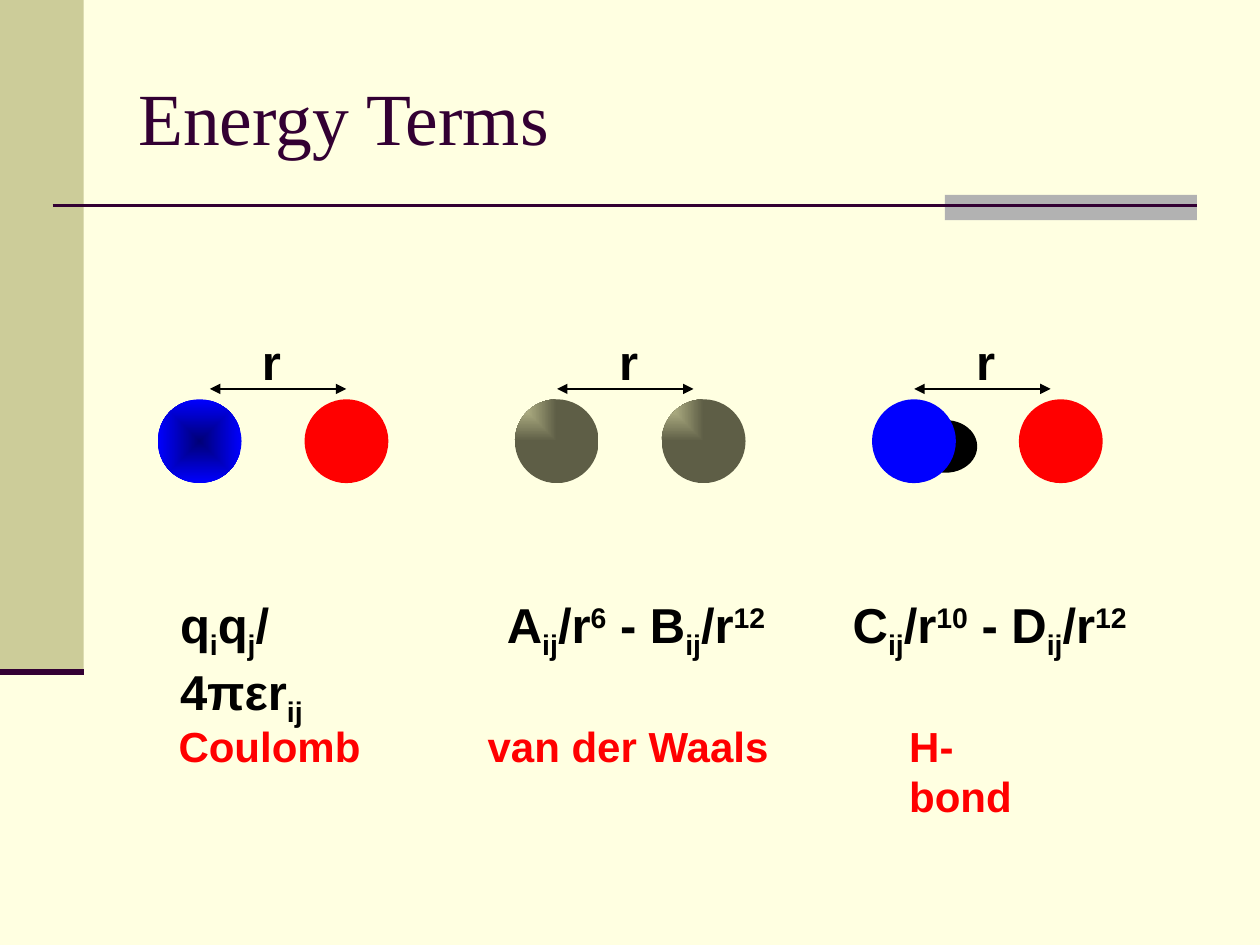
import pptx
import pptx.util
import pptx.dml.color
import pptx.enum.shapes
import pptx.enum.text
import pptx.oxml
import pptx.oxml.ns
from lxml import etree

Cm = pptx.util.Cm
Pt = pptx.util.Pt
SHAPE = pptx.enum.shapes.MSO_SHAPE

COLORS = {
    "paper": "FFFFE1", "khaki": "CCCC99", "olive": "5E5E46", "silver": "B2B2B2",
    "plum": "330033", "navy": "000076", "blue": "0000FF", "red": "FF0000",
    "black": "000000",
}
ATOM = 1.69
ATOM_STEP = 2.96
CORE = ("shape", (50, 50, 50, 50), "navy", "blue")
CORNER = ("rect", (0, 0, 100, 100), "khaki", "olive")
SUB, SUP = -25000, 30000

TERMS = [
    {"atoms": [CORE, "red"], "arrow": 1.05,
     "formula": (0.2, 4.65, True, [("q", 0), ("i", SUB), ("q", 0), ("j", SUB),
                                   ("/4πεr", 0), ("ij", SUB)]),
     "label": (0.17, 4.17, "Coulomb")},
    {"atoms": [CORNER, CORNER], "arrow": 0.85,
     "formula": (-0.41, 6, False, [("A", 0), ("ij", SUB), ("/r", 0), ("6", SUP),
                                   (" - B", 0), ("ij", SUB), ("/r", 0), ("12", SUP)]),
     "label": (-0.8, 6.17, "van der Waals")},
    {"atoms": ["blue", "red"], "arrow": 0.85, "hydrogen": True,
     "formula": (-0.64, 6.38, False, [("C", 0), ("ij", SUB), ("/r", 0), ("10", SUP),
                                      (" - D", 0), ("ij", SUB), ("/r", 0), ("12", SUP)]),
     "label": (0.5, 3.46, "H-bond")},
]


def rgb(name):
    return pptx.dml.color.RGBColor.from_string(COLORS[name])


def fill_path(sp, path, focus, inner, outer):
    stops = "".join(
        f'<a:gs pos="{pos}"><a:srgbClr val="{COLORS[name]}"/></a:gs>'
        for pos, name in ((0, inner), (100000, outer)))
    rect = " ".join(f'{side}="{v * 1000}"' for side, v in zip("ltrb", focus))
    grad = pptx.oxml.parse_xml(
        f'<a:gradFill {pptx.oxml.ns.nsdecls("a")} rotWithShape="1">'
        f'<a:gsLst>{stops}</a:gsLst>'
        f'<a:path path="{path}"><a:fillToRect {rect}/></a:path></a:gradFill>')
    old = sp._element.spPr.find(pptx.oxml.ns.qn("a:solidFill"))
    old.getparent().replace(old, grad)


def add_shape(s, kind, x, y, w, h, fill):
    sp = s.shapes.add_shape(kind, Cm(x), Cm(y), Cm(w), Cm(h))
    sp.shadow.inherit = False
    sp.line.fill.background()
    sp.fill.solid()
    if isinstance(fill, tuple):
        fill_path(sp, *fill)
    else:
        sp.fill.fore_color.rgb = rgb(fill)
    return sp


def add_line(s, x1, y1, x2, y2, color, width, arrows=False):
    ln = s.shapes.add_connector(pptx.enum.shapes.MSO_CONNECTOR.STRAIGHT,
                                Cm(x1), Cm(y1), Cm(x2), Cm(y2))
    ln.line.color.rgb = rgb(color)
    ln.line.width = Pt(width)
    qn = pptx.oxml.ns.qn
    if arrows:
        for end in ("a:headEnd", "a:tailEnd"):
            etree.SubElement(ln.line._ln, qn(end), type="triangle")
    etree.SubElement(ln._element.spPr, qn("a:effectLst"))


def add_text(s, x, y, w, h, runs, size, color, font="Arial", bold=True, wrap=False):
    sp = s.shapes.add_textbox(Cm(x), Cm(y), Cm(w), Cm(h))
    tf = sp.text_frame
    tf.word_wrap = wrap
    p = tf.paragraphs[0]
    for text, base in runs:
        r = p.add_run()
        r.text = text
        r.font.name = font
        r.font.size = Pt(size)
        r.font.bold = bold
        r.font.color.rgb = rgb(color)
        if base:
            r.font._element.set("baseline", str(base))
    return tf


def add_frame(s, x, y, w):
    add_shape(s, SHAPE.RECTANGLE, x, y, 1.69, 13.55, "khaki")
    add_shape(s, SHAPE.RECTANGLE, x + w - 6.35, y + 3.93, 5.08, 0.51, "silver")
    add_line(s, x + 1.06, y + 4.14, x + w - 1.27, y + 4.14, "plum", 1.5)
    add_line(s, x, y + 13.55, x + 1.69, y + 13.55, "plum", 3.5)


def add_title(s, x, y, w, h):
    tf = add_text(s, x, y, w, h, [("Energy Terms", 0)], 42, "plum",
                  "Times New Roman", False, True)
    tf.vertical_anchor = pptx.enum.text.MSO_ANCHOR.MIDDLE


def add_term(s, x, y, term):
    atom_y = y + 1.49
    left, right = term["atoms"]
    add_shape(s, SHAPE.OVAL, x + ATOM_STEP, atom_y, ATOM, ATOM, right)
    if term.get("hydrogen"):
        add_shape(s, SHAPE.OVAL, x + 0.85, atom_y + 0.42, 1.27, 1.06, "black")
    add_shape(s, SHAPE.OVAL, x, atom_y, ATOM, ATOM, left)
    add_text(s, x + 1.85, y, 0.89, 1.45, [("r", 0)], 28, "black")
    start = x + term["arrow"]
    add_line(s, start, y + 1.28, start + 2.75, y + 1.28, "black", 0.75, True)
    dx, w, wrap, runs = term["formula"]
    add_text(s, x + dx, y + 5.3, w, 1.45, runs, 28, "black", wrap=wrap)
    dx, w, label = term["label"]
    add_text(s, x + dx, y + 7.84, w, 1.27, [(label, 0)], 24, "red")


def main():
    prs = pptx.Presentation()
    prs.slide_width, prs.slide_height = Cm(25.4), Cm(19.05)
    s = prs.slides.add_slide(prs.slide_layouts[6])
    s.background.fill.solid()
    s.background.fill.fore_color.rgb = rgb("paper")
    add_frame(s, 0, 0, 25.4)
    add_title(s, 2.54, 0.76, 21.59, 3.18)
    for i, term in enumerate(TERMS):
        add_term(s, 3.18 + 7.2 * i, 6.56, term)
    prs.save("out.pptx")


if __name__ == "__main__":
    main()
